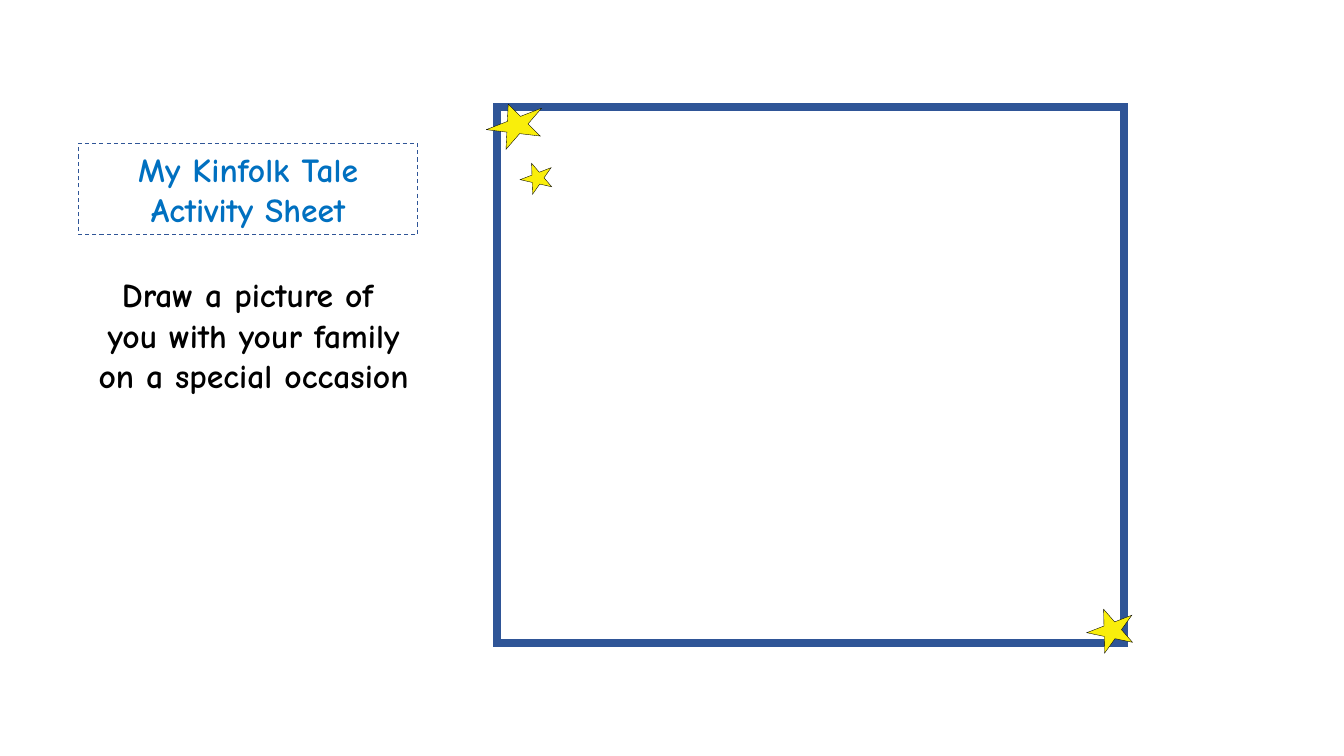
from pptx import Presentation
from pptx.dml.color import RGBColor
from pptx.enum.dml import MSO_LINE
from pptx.enum.shapes import MSO_SHAPE
from pptx.enum.text import MSO_ANCHOR, MSO_AUTO_SIZE, PP_ALIGN
from pptx.oxml.ns import qn
from pptx.util import Inches, Pt

DASH = MSO_LINE.DASH
RECTANGLE, STAR = MSO_SHAPE.RECTANGLE, MSO_SHAPE.STAR_5_POINT
CENTER, MIDDLE, TOP = PP_ALIGN.CENTER, MSO_ANCHOR.MIDDLE, MSO_ANCHOR.TOP
NO_AUTOFIT = MSO_AUTO_SIZE.NONE

# Content: positions are left, top, width, height in inches
TITLE = ["My Kinfolk Tale Activity Sheet"]
TITLE_AT = (0.78, 1.42, 3.36, 0.91)
TASK = ["Draw a picture of", " you with your family", " on a special occasion"]
TASK_AT = (0.55, 2.67, 3.81, 1.31)
FRAME_AT = (4.93, 1.06, 6.22, 5.32)
STARS_AT = [
    (4.82, 1.02, 0.59, 0.41),
    (5.16, 1.61, 0.33, 0.29),
    (10.78, 6.03, 0.48, 0.41),
]
STAR_TILT = 338.8

THEME = {
    "title": RGBColor.from_string("0070C0"),
    "text": RGBColor.from_string("000000"),
    "paper": RGBColor.from_string("FFFFFF"),
    "border": RGBColor.from_string("2F5597"),
    "star": RGBColor.from_string("F9EE0B"),
    "font": {"name": "Comic Neue", "size": Pt(24), "bold": True},
}


def place(box, at):
    box.left, box.top, box.width, box.height = map(Inches, at)


def outline(box, color, width, dash=None):
    box.line.color.rgb = color
    box.line.width = Pt(width)
    if dash:
        box.line.dash_style = dash
    # Sharp corners
    line = box.line._get_or_add_ln()
    line.append(line.makeelement(qn("a:miter"), {"lim": "800000"}))


def write(box, at, lines, color, anchor):
    place(box, at)
    frame = box.text_frame
    frame.text = "\n".join(lines)
    frame.word_wrap = True
    frame.auto_size = NO_AUTOFIT
    frame.vertical_anchor = anchor
    for para in frame.paragraphs:
        para.alignment = CENTER
        para.space_before = Pt(0)
        properties = para._p.get_or_add_pPr()
        properties.set("marL", "0")
        properties.set("indent", "0")
        properties.append(properties.makeelement(qn("a:buNone"), {}))
        for span in para.runs:
            span.font.color.rgb = color
            for name, value in THEME["font"].items():
                setattr(span.font, name, value)


def draw(page, kind, at, fill, line, width):
    box = page.shapes.add_shape(kind, *map(Inches, at))
    box.shadow.inherit = False
    box.fill.solid()
    box.fill.fore_color.rgb = fill
    outline(box, line, width)
    return box


def main():
    deck = Presentation()
    deck.slide_width, deck.slide_height = Inches(13.33), Inches(7.5)
    page = deck.slides.add_slide(deck.slide_layouts[1])

    # Title in a dashed box, task below it
    title, task = page.placeholders
    write(title, TITLE_AT, TITLE, THEME["title"], MIDDLE)
    outline(title, THEME["border"], 0.75, DASH)
    write(task, TASK_AT, TASK, THEME["text"], TOP)

    # Drawing frame with stars at its corners
    draw(page, RECTANGLE, FRAME_AT, THEME["paper"], THEME["border"], 6)
    for at in STARS_AT:
        star = draw(page, STAR, at, THEME["star"], THEME["text"], 0.25)
        star.rotation = STAR_TILT

    deck.save("out.pptx")


if __name__ == "__main__":
    main()
